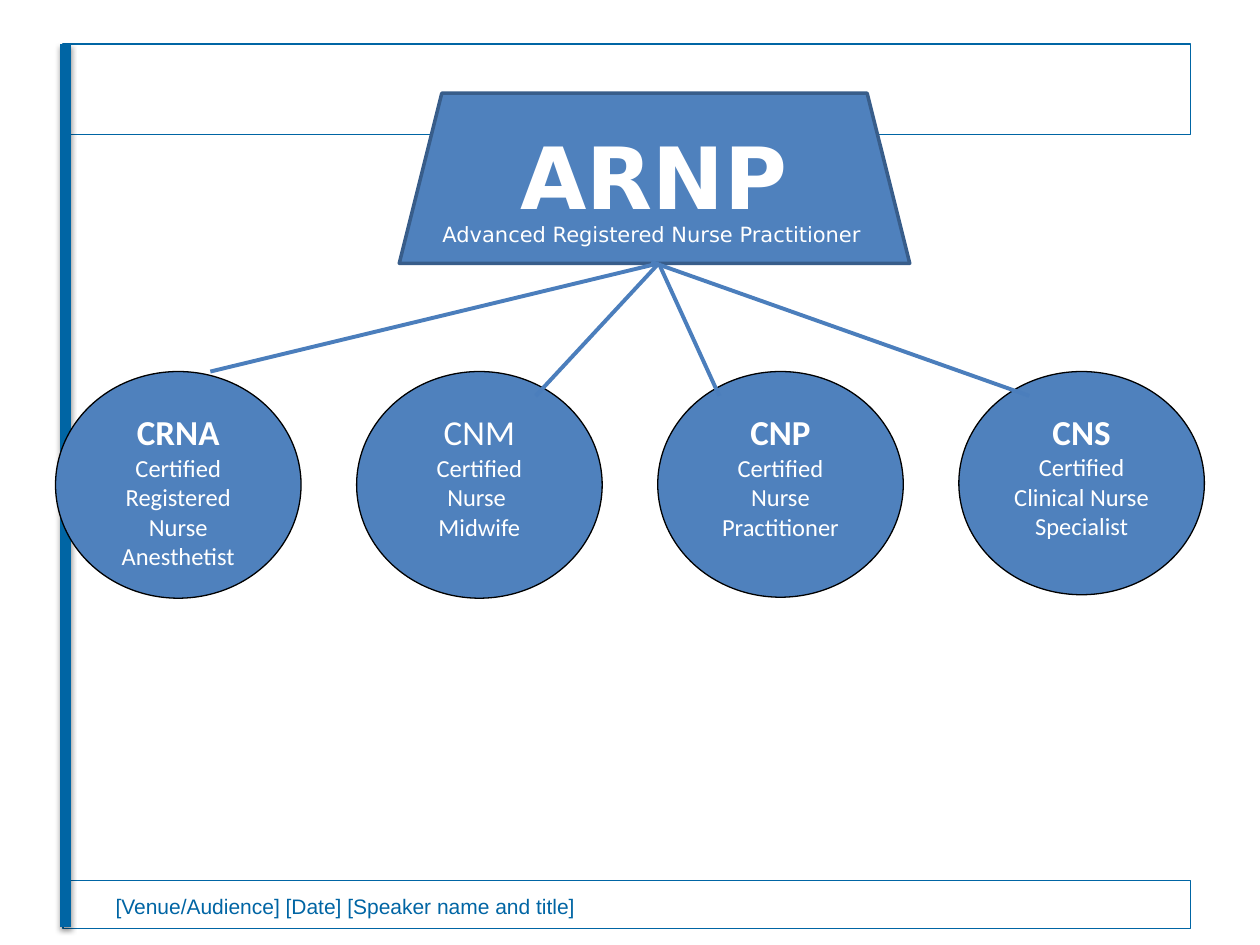
from dataclasses import dataclass

from lxml import etree
from pptx import Presentation
from pptx.dml.color import RGBColor
from pptx.enum.shapes import MSO_CONNECTOR as Connector, MSO_SHAPE as Preset
from pptx.enum.text import MSO_ANCHOR as Anchor, MSO_AUTO_SIZE as AutoSize, PP_ALIGN as Align
from pptx.oxml.ns import qn
from pptx.util import Cm, Pt

WHITE = RGBColor(0xFF, 0xFF, 0xFF)
BLACK = RGBColor(0x00, 0x00, 0x00)
FRAME_BLUE = RGBColor(0x00, 0x65, 0xA4)
FILL_BLUE = RGBColor(0x4F, 0x81, 0xBD)
EDGE_BLUE = RGBColor(0x38, 0x5D, 0x8A)
BRANCH_BLUE = RGBColor(0x4B, 0x7E, 0xBC)

CIRCLE_LEFT, CIRCLE_TOP, CIRCLE_WIDTH, CIRCLE_PITCH = 1.12, 7.49, 4.95, 6.07
TITLE_ONLY_LAYOUT = 5


@dataclass(frozen=True)
class Box:
    left: float
    top: float
    width: float
    height: float

    def lengths(self) -> tuple[Cm, Cm, Cm, Cm]:
        return Cm(self.left), Cm(self.top), Cm(self.width), Cm(self.height)


@dataclass(frozen=True)
class Role:
    name: str
    lines: tuple[str, ...]
    height: float
    branch_start: tuple[float, float]
    branch_end: tuple[float, float]
    bold: bool = True


HUB = (13.28, 5.31)
ROLES = (
    Role("CRNA", ("Certified Registered Nurse Anesthetist",), 4.57, HUB, (4.24, 7.49)),
    Role("CNM", ("Certified Nurse ", "Midwife"), 4.57, HUB, (10.8, 7.98), bold=False),
    Role("CNP", ("Certified", "Nurse\vPractitioner"), 4.55, HUB, (14.5, 7.98)),
    Role("CNS", ("Certified", "Clinical Nurse", "Specialist"), 4.5, (13.13, 5.28), (20.75, 7.98)),
)


def add_outlined(slide, preset, box: Box, fill, line, width: float):
    shape = slide.shapes.add_shape(preset, *box.lengths())
    shape.shadow.inherit = False
    if fill is None:
        shape.fill.background()
    else:
        shape.fill.solid()
        shape.fill.fore_color.rgb = fill
    shape.line.color.rgb = line
    shape.line.width = Pt(width)
    return shape


def add_line(slide, start: tuple[float, float], end: tuple[float, float], color, width: float):
    """Draw a straight line and return its empty effect list."""
    line = slide.shapes.add_connector(
        Connector.STRAIGHT, Cm(start[0]), Cm(start[1]), Cm(end[0]), Cm(end[1]))
    line.line.color.rgb = color
    line.line.width = Pt(width)
    return etree.SubElement(line.element.spPr, qn("a:effectLst"))


def add_shadow(effects) -> None:
    shadow = etree.SubElement(effects, qn("a:outerShdw"), blurRad=str(Pt(3.1)),
                              dist=str(Pt(1.6)), dir="5400000", rotWithShape="0")
    color = etree.SubElement(shadow, qn("a:srgbClr"), val=str(BLACK))
    etree.SubElement(color, qn("a:alpha"), val="38000")


def set_font(paragraph, name: str, size: float, color, bold: bool = False) -> None:
    font = paragraph.font
    font.name, font.size, font.bold = name, Pt(size), bold
    font.color.rgb = color


def write_label(shape, text: str, name: str, size: float, color, bold=False, inset=True) -> None:
    frame = shape.text_frame
    frame.text = text
    frame.word_wrap = True
    frame.auto_size = AutoSize.NONE
    frame.vertical_anchor = Anchor.TOP
    if not inset:
        frame.margin_left = frame.margin_right = frame.margin_top = frame.margin_bottom = 0
    paragraph = frame.paragraphs[0]
    paragraph.alignment = Align.LEFT
    set_font(paragraph, name, size, color, bold)


def add_role(slide, role: Role, column: int) -> None:
    box = Box(CIRCLE_LEFT + column * CIRCLE_PITCH, CIRCLE_TOP, CIRCLE_WIDTH, role.height)
    circle = add_outlined(slide, Preset.OVAL, box, FILL_BLUE, BLACK, 0)
    frame = circle.text_frame
    frame.word_wrap = True
    frame.vertical_anchor = Anchor.TOP
    for index, text in enumerate((role.name, *role.lines)):
        paragraph = frame.add_paragraph() if index else frame.paragraphs[0]
        paragraph.text = text
        paragraph.alignment = Align.CENTER
        is_name = index == 0
        set_font(paragraph, "Calibri", 20 if is_name else 14, WHITE, is_name and role.bold)


def main() -> None:
    presentation = Presentation()
    presentation.slide_width, presentation.slide_height = Cm(25.4), Cm(19.05)
    slide = presentation.slides.add_slide(presentation.slide_layouts[TITLE_ONLY_LAYOUT])

    # Frame: footer band, header band and vertical rule
    add_outlined(slide, Preset.RECTANGLE, Box(1.27, 17.75, 22.73, 0.97), WHITE, FRAME_BLUE, 0.75)
    add_outlined(slide, Preset.RECTANGLE, Box(1.27, 0.89, 22.73, 1.83), None, FRAME_BLUE, 0.75)
    add_shadow(add_line(slide, (1.32, 0.89), (1.32, 18.69), FRAME_BLUE, 6))
    footer = slide.shapes.add_textbox(*Box(2.08, 17.88, 21.74, 0.76).lengths())
    write_label(footer, "[Venue/Audience] [Date] [Speaker name and title]", "Arial", 12, FRAME_BLUE)

    # Root of the tree, with the title in front of it
    root = add_outlined(slide, Preset.TRAPEZOID, Box(8.05, 1.88, 10.29, 3.43),
                        FILL_BLUE, EDGE_BLUE, 2)
    root.adjustments[0] = 0.25
    title = slide.shapes.title
    title.left, title.top, title.width, title.height = Box(10.49, 2.5, 6.4, 2.1).lengths()
    write_label(title, "ARNP", "DejaVu Sans", 49, WHITE, bold=True, inset=False)
    root.element.addnext(title.element)
    subtitle = slide.shapes.add_textbox(*Box(8.92, 4.47, 9.37, 0.66).lengths())
    write_label(subtitle, "Advanced Registered Nurse Practitioner", "DejaVu Sans", 12, WHITE,
                inset=False)

    # Four roles, then the branches in front of them
    for column, role in enumerate(ROLES):
        add_role(slide, role, column)
    for role in ROLES:
        add_line(slide, role.branch_start, role.branch_end, BRANCH_BLUE, 2.25)

    presentation.save("out.pptx")


if __name__ == "__main__":
    main()
